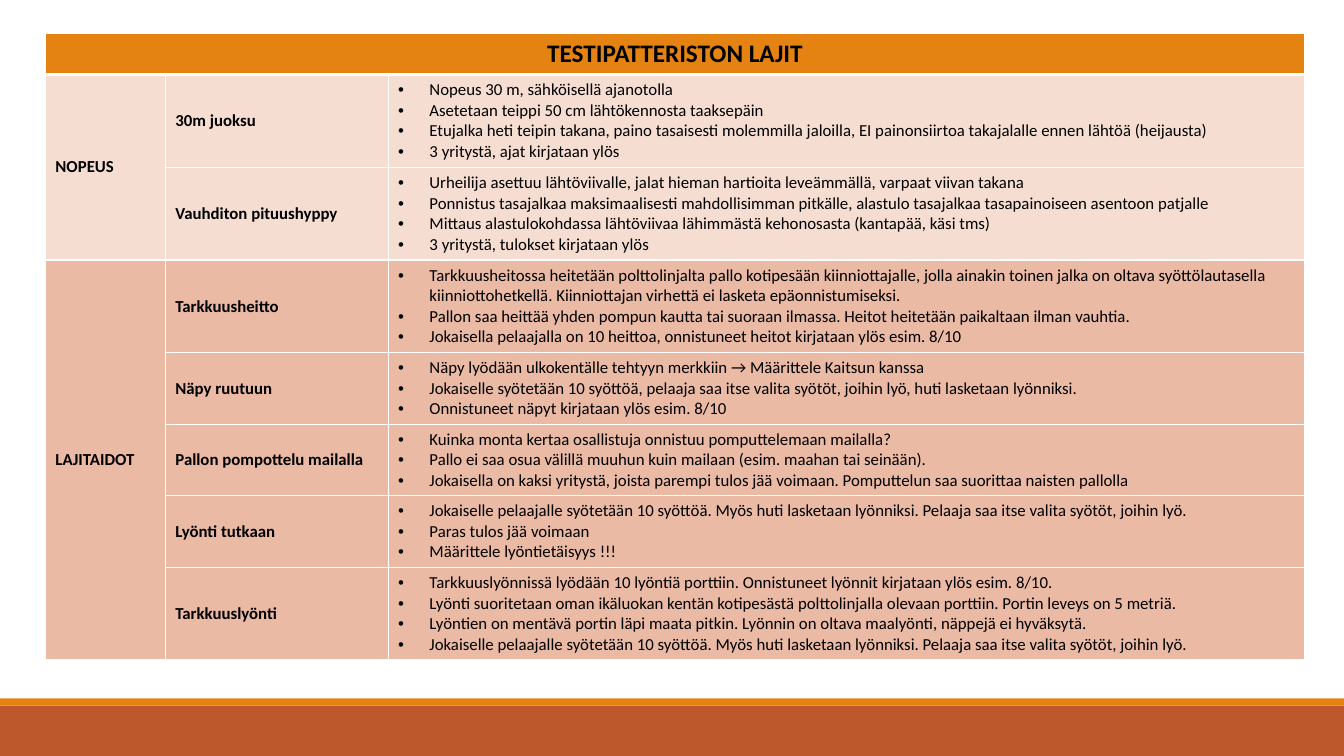
from pptx import Presentation
from pptx.dml.color import RGBColor
from pptx.enum import shapes, text
from pptx.oxml import parse_xml
from pptx.oxml.ns import nsdecls
from pptx.util import Inches, Pt

BLACK = RGBColor(0x00, 0x00, 0x00)
WHITE = RGBColor(0xFF, 0xFF, 0xFF)
ORANGE = RGBColor(0xE4, 0x83, 0x12)
RUST = RGBColor(0xBD, 0x58, 0x2C)
LIGHT = RGBColor(0xF5, 0xDD, 0xD2)
SALMON = RGBColor(0xEA, 0xBA, 0xA5)

SLIDE_W, SLIDE_H = 13.33, 7.5
TABLE_LEFT, TABLE_TOP = 0.45, 0.33
COLUMNS = (1.19, 2.21, 9.09)
HEADER_H = 0.41
ROW_H = {3: 0.71, 4: 0.92}  # row height by number of text lines
INDENT = 0.31

TITLE = "TESTIPATTERISTON LAJIT"
# group name, fill, tests: (name, text lines, instructions)
GROUPS = [
    ("NOPEUS", LIGHT, [
        ("30m juoksu", 4, [
            "Nopeus 30 m, sähköisellä ajanotolla",
            "Asetetaan teippi 50 cm lähtökennosta taaksepäin",
            "Etujalka heti teipin takana, paino tasaisesti molemmilla jaloilla, "
            "EI painonsiirtoa takajalalle ennen lähtöä (heijausta)",
            "3 yritystä, ajat kirjataan ylös",
        ]),
        ("Vauhditon pituushyppy", 4, [
            "Urheilija asettuu lähtöviivalle, jalat hieman hartioita leveämmällä, "
            "varpaat viivan takana",
            "Ponnistus tasajalkaa maksimaalisesti mahdollisimman pitkälle, "
            "alastulo tasajalkaa tasapainoiseen asentoon patjalle",
            "Mittaus alastulokohdassa lähtöviivaa lähimmästä kehonosasta "
            "(kantapää, käsi tms)",
            "3 yritystä, tulokset kirjataan ylös",
        ]),
    ]),
    ("LAJITAIDOT", SALMON, [
        ("Tarkkuusheitto", 4, [
            "Tarkkuusheitossa heitetään polttolinjalta pallo kotipesään "
            "kiinniottajalle, jolla ainakin toinen jalka on oltava syöttölautasella "
            "kiinniottohetkellä. Kiinniottajan virhettä ei lasketa epäonnistumiseksi.",
            "Pallon saa heittää yhden pompun kautta tai suoraan ilmassa. "
            "Heitot heitetään paikaltaan ilman vauhtia.",
            "Jokaisella pelaajalla on 10 heittoa, onnistuneet heitot kirjataan "
            "ylös esim. 8/10",
        ]),
        ("Näpy ruutuun", 3, [
            "Näpy lyödään ulkokentälle tehtyyn merkkiin → Määrittele Kaitsun kanssa",
            "Jokaiselle syötetään 10 syöttöä, pelaaja saa itse valita syötöt, "
            "joihin lyö, huti lasketaan lyönniksi.",
            "Onnistuneet näpyt kirjataan ylös esim. 8/10",
        ]),
        ("Pallon pompottelu mailalla", 3, [
            "Kuinka monta kertaa osallistuja onnistuu pomputtelemaan mailalla?",
            "Pallo ei saa osua välillä muuhun kuin mailaan (esim. maahan tai seinään).",
            "Jokaisella on kaksi yritystä, joista parempi tulos jää voimaan. "
            "Pomputtelun saa suorittaa naisten pallolla",
        ]),
        ("Lyönti tutkaan", 3, [
            "Jokaiselle pelaajalle syötetään 10 syöttöä. Myös huti lasketaan "
            "lyönniksi. Pelaaja saa itse valita syötöt, joihin lyö.",
            "Paras tulos jää voimaan",
            "Määrittele lyöntietäisyys !!!",
        ]),
        ("Tarkkuuslyönti", 4, [
            "Tarkkuuslyönnissä lyödään 10 lyöntiä porttiin. Onnistuneet lyönnit "
            "kirjataan ylös esim. 8/10.",
            "Lyönti suoritetaan oman ikäluokan kentän kotipesästä polttolinjalla "
            "olevaan porttiin. Portin leveys on 5 metriä.",
            "Lyöntien on mentävä portin läpi maata pitkin. Lyönnin on oltava "
            "maalyönti, näppejä ei hyväksytä.",
            "Jokaiselle pelaajalle syötetään 10 syöttöä. Myös huti lasketaan "
            "lyönniksi. Pelaaja saa itse valita syötöt, joihin lyö.",
        ]),
    ]),
]


def add_band(s, top, height, color):
    sp = s.shapes.add_shape(shapes.MSO_SHAPE.RECTANGLE, 0, Inches(top),
                            Inches(SLIDE_W), Inches(height))
    sp.shadow.inherit = False
    sp.fill.solid()
    sp.fill.fore_color.rgb = color
    sp.line.fill.background()


def write(tf, lines, size=12, bold=True, align=None, bullets=False):
    for i, line in enumerate(lines):
        p = tf.paragraphs[0] if i == 0 else tf.add_paragraph()
        p.alignment = align
        r = p.add_run()
        r.text = line
        r.font.name = "Calibri"
        r.font.size = Pt(size)
        r.font.bold = bold
        r.font.color.rgb = BLACK
        if bullets:
            pPr = p._p.get_or_add_pPr()
            pPr.set("marL", str(Inches(INDENT)))
            pPr.set("indent", str(-Inches(INDENT)))
            pPr.append(parse_xml(f'<a:buFont {nsdecls("a")} typeface="Arial"/>'))
            pPr.append(parse_xml(f'<a:buChar {nsdecls("a")} char="•"/>'))


def style_cell(cell, color, top=1, bottom=1):
    """Give the cell white borders (widths in points) and a solid fill."""
    tcPr = cell._tc.get_or_add_tcPr()
    for side, width in (("L", 1), ("R", 1), ("T", top), ("B", bottom)):
        tcPr.append(parse_xml(
            f'<a:ln{side} {nsdecls("a")} w="{Pt(width)}"><a:solidFill>'
            f'<a:srgbClr val="{WHITE}"/></a:solidFill></a:ln{side}>'))
    cell.fill.solid()
    cell.fill.fore_color.rgb = color
    cell.vertical_anchor = text.MSO_ANCHOR.MIDDLE


def add_test_table(s):
    heights = [HEADER_H] + [ROW_H[n] for _, _, tests in GROUPS for _, n, _ in tests]
    frame = s.shapes.add_table(
        len(heights), len(COLUMNS), Inches(TABLE_LEFT), Inches(TABLE_TOP),
        Inches(sum(COLUMNS)), Inches(sum(heights)))
    table = frame.table
    for column, width in zip(table.columns, COLUMNS):
        column.width = Inches(width)
    for row, height in zip(table.rows, heights):
        row.height = Inches(height)

    for cell in table.rows[0].cells:
        style_cell(cell, ORANGE, bottom=3)
    header = table.cell(0, 0)
    header.merge(table.cell(0, len(COLUMNS) - 1))
    header.vertical_anchor = text.MSO_ANCHOR.TOP
    write(header.text_frame, [TITLE], size=18, align=text.PP_ALIGN.CENTER)

    first = 1
    for group, color, tests in GROUPS:
        for row, (name, _, instructions) in enumerate(tests, first):
            for cell in table.rows[row].cells:
                style_cell(cell, color, top=3 if row == 1 else 1)
            write(table.cell(row, 1).text_frame, [name])
            write(table.cell(row, 2).text_frame, instructions, bold=False, bullets=True)
        table.cell(first, 0).merge(table.cell(first + len(tests) - 1, 0))
        write(table.cell(first, 0).text_frame, [group])
        first += len(tests)


def main():
    prs = Presentation()
    prs.slide_width, prs.slide_height = Inches(SLIDE_W), Inches(SLIDE_H)
    s = prs.slides.add_slide(prs.slide_layouts[6])
    add_band(s, 7, 0.5, RUST)
    add_band(s, 6.93, 0.07, ORANGE)
    add_test_table(s)
    prs.save("out.pptx")


if __name__ == "__main__":
    main()
